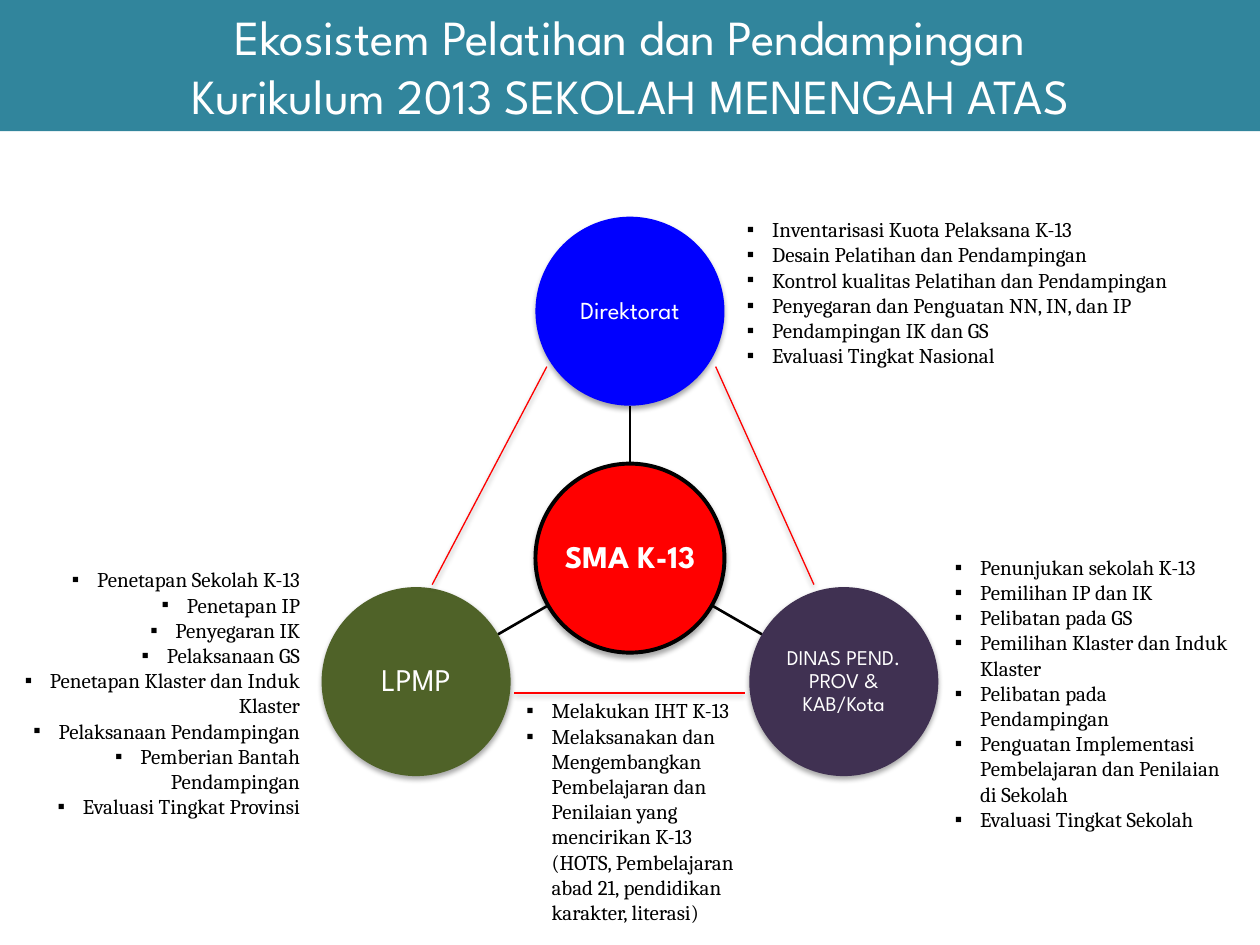
from math import cos, radians, sin

from lxml import etree
from pptx import Presentation
from pptx.dml.color import RGBColor
from pptx.enum.shapes import MSO_CONNECTOR, MSO_SHAPE
from pptx.enum.text import MSO_ANCHOR as Anchor, MSO_AUTO_SIZE as AutoSize, PP_ALIGN as Align
from pptx.oxml import parse_xml
from pptx.oxml.ns import nsdecls, qn
from pptx.util import Inches, Pt

WHITE = RGBColor(0xFF, 0xFF, 0xFF)
BLACK = RGBColor(0x00, 0x00, 0x00)
RED = RGBColor(0xFF, 0x00, 0x00)
BLUE = RGBColor(0x00, 0x00, 0xFF)
PURPLE = RGBColor(0x40, 0x31, 0x52)
GREEN = RGBColor(0x4F, 0x62, 0x28)
TEAL = RGBColor(0x31, 0x85, 0x9C)
HEADING_FONT, LIST_FONT = "League Spartan", "Cambria"

# Content
TITLE = ["Ekosistem Pelatihan dan Pendampingan", "Kurikulum 2013 SEKOLAH MENENGAH ATAS"]

# Outer circles: label, fill, font size, angle around the hub
PARTNERS = [
    ("Direktorat", BLUE, 14, -90),
    ("DINAS PEND. PROV & KAB/Kota", PURPLE, 12, 30),
    ("LPMP", GREEN, 18, 150),
]

# Lines between partners: start and end
SIDES = [
    ((4.34, 2.91), (3.43, 4.64)),
    ((5.68, 2.91), (6.46, 4.64)),
    ((5.91, 5.5), (4.08, 5.5)),
]

# Task lists: left, top, width, height, alignment, items
TASKS = [
    (5.83, 1.67, 3.85, 1.31, Align.LEFT, [
        "Inventarisasi Kuota Pelaksana K-13",
        "Desain Pelatihan dan Pendampingan",
        "Kontrol kualitas Pelatihan dan Pendampingan",
        "Penyegaran dan Penguatan NN, IN, dan IP",
        "Pendampingan IK dan GS",
        "Evaluasi Tingkat Nasional",
    ]),
    (7.48, 4.35, 2.46, 2.32, Align.LEFT, [
        "Penunjukan sekolah K-13",
        "Pemilihan IP dan IK",
        "Pelibatan pada GS",
        "Pemilihan Klaster dan Induk Klaster",
        "Pelibatan pada Pendampingan",
        "Penguatan Implementasi Pembelajaran dan Penilaian di Sekolah",
        "Evaluasi Tingkat Sekolah",
    ]),
    (0, 4.45, 2.48, 2.12, Align.RIGHT, [
        "Penetapan Sekolah K-13",
        "Penetapan IP",
        "Penyegaran IK",
        "Pelaksanaan GS",
        "Penetapan Klaster dan Induk Klaster",
        "Pelaksanaan Pendampingan",
        "Pemberian Bantah Pendampingan",
        "Evaluasi Tingkat Provinsi",
    ]),
    (4.08, 5.49, 1.93, 1.92, Align.LEFT, [
        "Melakukan IHT K-13",
        "Melaksanakan dan Mengembangkan Pembelajaran dan Penilaian yang mencirikan K-13 "
        "(HOTS, Pembelajaran abad 21, pendidikan karakter, literasi)",
    ]),
]

# Geometry of the wheel
HUB_X, HUB_Y = 5, 4.43
RADIUS, ORBIT = 0.75, 1.96
INDENT = 0.2


def set_effects(shape, opacity=None, distance=0):
    """Give a shape a soft shadow below it, or none without an opacity."""
    properties = shape._element.spPr
    for old in properties.findall(qn("a:effectLst")):
        properties.remove(old)
    effects = etree.SubElement(properties, qn("a:effectLst"))
    if opacity:
        effects.append(parse_xml(
            f'<a:outerShdw {nsdecls("a")} blurRad="{Pt(3.1)}" dist="{Pt(distance)}" '
            f'dir="5400000" rotWithShape="0"><a:srgbClr val="000000">'
            f'<a:alpha val="{opacity * 1000}"/></a:srgbClr></a:outerShdw>'))


def format_text(para, font, size, color, align, bold=False):
    para.alignment = align
    para.font.name, para.font.size = font, Pt(size)
    para.font.color.rgb, para.font.bold = color, bold


def point_at(angle, distance):
    turn = radians(angle)
    return HUB_X + distance * cos(turn), HUB_Y + distance * sin(turn)


def add_circle(page, center, label, fill, size, bold=False):
    x, y = center
    circle = page.shapes.add_shape(MSO_SHAPE.OVAL, Inches(x - RADIUS), Inches(y - RADIUS),
                                   Inches(2 * RADIUS), Inches(2 * RADIUS))
    circle.fill.solid()
    circle.fill.fore_color.rgb = fill
    circle.line.fill.background()
    set_effects(circle, 35, 1.8)
    frame = circle.text_frame
    frame.word_wrap, frame.vertical_anchor = True, Anchor.MIDDLE
    frame.margin_left = frame.margin_right = Inches(0.01)
    frame.margin_top = frame.margin_bottom = Inches(0.01)
    para = frame.paragraphs[0]
    para.text, para.line_spacing = label, 0.9
    format_text(para, HEADING_FONT, size, WHITE, Align.CENTER, bold)
    return circle


def add_line(page, start, end, color, width):
    line = page.shapes.add_connector(MSO_CONNECTOR.STRAIGHT,
                                     *(Inches(value) for value in (*start, *end)))
    line.line.color.rgb, line.line.width = color, Pt(width)
    set_effects(line)
    return line


def add_bullet(para):
    properties = para._p.get_or_add_pPr()
    properties.set("marL", str(Inches(INDENT)))
    properties.set("indent", str(-Inches(INDENT)))
    etree.SubElement(properties, qn("a:buFont")).set("typeface", "Arial")
    etree.SubElement(properties, qn("a:buChar")).set("char", "▪")


def add_tasks(page, left, top, width, height, align, items):
    box = page.shapes.add_textbox(Inches(left), Inches(top), Inches(width), Inches(height))
    frame = box.text_frame
    frame.word_wrap, frame.auto_size = True, AutoSize.SHAPE_TO_FIT_TEXT
    for index, item in enumerate(items):
        para = frame.add_paragraph() if index else frame.paragraphs[0]
        para.text = item
        add_bullet(para)
        format_text(para, LIST_FONT, 12, BLACK, align)


def add_title(page):
    title = page.shapes.title
    title.left, title.top = Inches(0), Inches(0)
    title.width, title.height = Inches(10), Inches(1.04)
    title.fill.solid()
    title.fill.fore_color.rgb = TEAL
    frame = title.text_frame
    frame.text = "\n".join(TITLE)
    frame.auto_size, frame.vertical_anchor = AutoSize.NONE, Anchor.MIDDLE
    for para in frame.paragraphs:
        format_text(para, HEADING_FONT, 28, WHITE, Align.CENTER)


def main():
    deck = Presentation()
    deck.slide_width, deck.slide_height = Inches(10), Inches(7.5)
    page = deck.slides.add_slide(deck.slide_layouts[5])
    add_title(page)

    # Hub, spokes and partners
    hub = add_circle(page, (HUB_X, HUB_Y), "SMA K-13", RED, 18, bold=True)
    hub.line.color.rgb, hub.line.width = BLACK, Pt(2.25)
    for label, fill, size, angle in PARTNERS:
        add_line(page, point_at(angle, RADIUS), point_at(angle, ORBIT - RADIUS), BLACK, 1.5)
        add_circle(page, point_at(angle, ORBIT), label, fill, size)

    # Triangle sides
    for start, end in SIDES:
        set_effects(add_line(page, start, end, RED, 0.75), 38, 1.6)

    # Task lists
    for tasks in TASKS:
        add_tasks(page, *tasks)

    deck.save("out.pptx")


if __name__ == "__main__":
    main()
